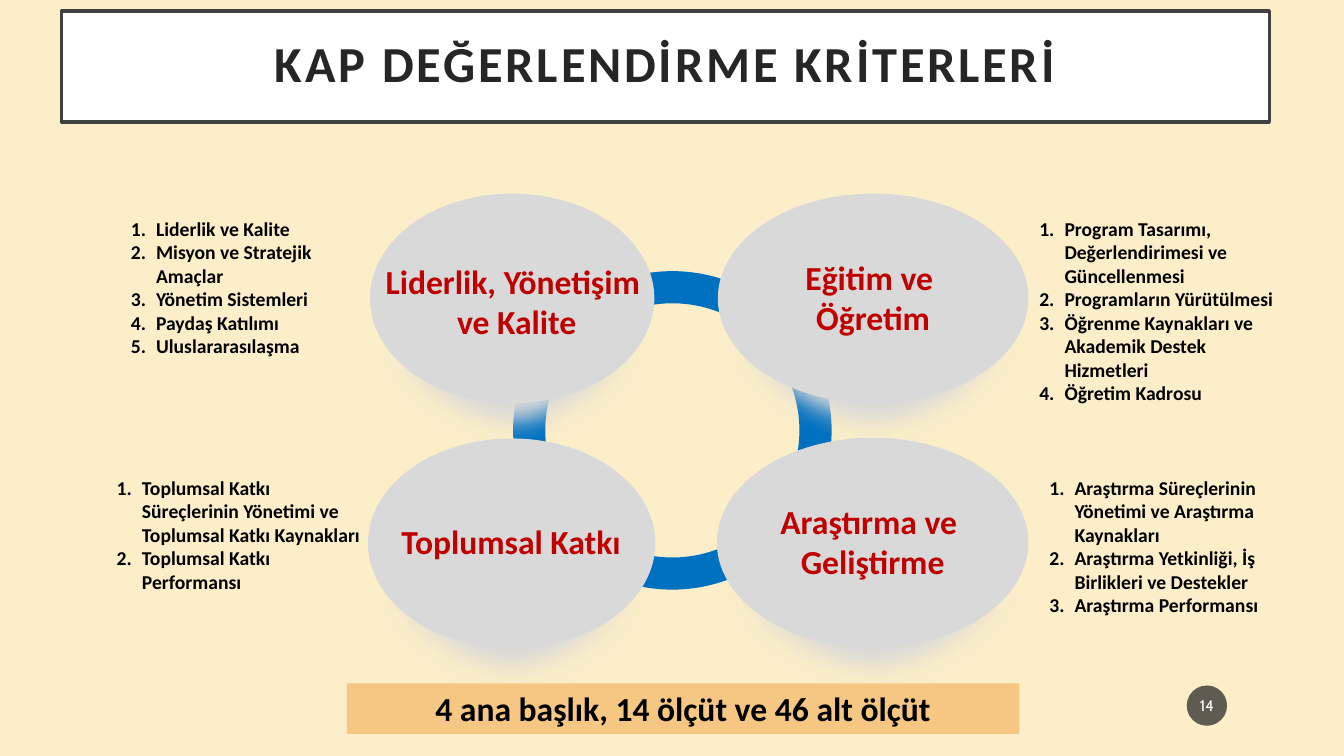
"""Build the slide of the four KAP evaluation criteria."""
from lxml.etree import SubElement
from pptx import Presentation
from pptx.dml.color import RGBColor
from pptx.enum.shapes import MSO_SHAPE
from pptx.enum.text import MSO_ANCHOR, MSO_AUTO_SIZE, PP_ALIGN
from pptx.oxml.ns import qn
from pptx.util import Inches, Pt

prs = Presentation()
prs.slide_width, prs.slide_height = Inches(13.33), Inches(7.5)
COL, ROW = prs.slide_width / 100, prs.slide_height / 100
slide = prs.slides.add_slide(prs.slide_layouts[6])
rgb = RGBColor.from_string
slide.background.fill.solid()
slide.background.fill.fore_color.rgb = rgb("FBEEC9")


def add(kind, box, fill=None):
    """Add a filled shape, or a text box when kind is None, at slide percentages."""
    x, y, w, h = box
    at = [int(v) for v in (x * COL, y * ROW, w * COL, h * ROW)]
    if kind is None:
        return slide.shapes.add_textbox(*at)
    s = slide.shapes.add_shape(kind, *at)
    s.shadow.inherit = False
    s.fill.solid()
    s.fill.fore_color.rgb = rgb(fill)
    s.line.fill.background()
    return s


def write(s, lines, size, color, align=PP_ALIGN.CENTER, frame=None, font="Calibri", bold=True):
    """Write one paragraph per line and return the text frame."""
    tf = s.text_frame
    settings = {"word_wrap": True, "auto_size": MSO_AUTO_SIZE.SHAPE_TO_FIT_TEXT}
    for name, value in {**settings, **(frame or {})}.items():
        setattr(tf, name, value)
    for i, line in enumerate(lines):
        p = tf.paragraphs[0] if i == 0 else tf.add_paragraph()
        p.alignment = align
        r = p.add_run()
        r.text = line
        for name, value in {"name": font, "size": Pt(size), "bold": bold}.items():
            setattr(r.font, name, value)
        r.font.color.rgb = rgb(color)
    return tf


ring = add(MSO_SHAPE.DONUT, (38.18, 35.87, 23.7, 42.13), "0070C0")
ring.adjustments[0] = 0.101

criteria = [
    ((27.53, 25.6, 21.16), (27.83, 33.73, 21.23, 12.13),
     ["Liderlik, Yönetişim ", "ve Kalite"]),
    ((53.41, 25.6, 23.11), (59.11, 33.2, 11.7, 12.13),
     ["Eğitim ve ", "Öğretim"]),
    ((27.38, 58, 21.38), (29.03, 68.27, 18, 6.67),
     ["Toplumsal Katkı"]),
    ((53.34, 57.9, 23.18), (57.24, 65.47, 15.38, 12.13),
     ["Araştırma ve ", "Geliştirme"]),
]
for (x, y, w), label_box, label in criteria:
    inset = 0.046 * w
    layers = [
        ((x, y + 6.4, w, 27.73), 0.3),
        ((x + inset, y + 2.93, w - 2 * inset, 29.07), 0.25),
        ((x, y, w, 27.73), 0),
    ]
    for box, blur in layers:
        oval = add(MSO_SHAPE.OVAL, box, "D9D9D9")
        if blur:
            effects = oval._element.spPr.find(qn("a:effectLst"))
            SubElement(effects, qn("a:softEdge"), rad=str(Inches(blur)))
    write(add(None, label_box), label, 24, "C00000",
          frame={"word_wrap": False, "vertical_anchor": MSO_ANCHOR.MIDDLE})

measures = [
    ((7.95, 62.27, 19.73, 23.33), [
        "Toplumsal Katkı Süreçlerinin Yönetimi ve Toplumsal Katkı Kaynakları",
        "Toplumsal Katkı Performansı"]),
    ((77.34, 62.27, 21.91, 23.33), [
        "Araştırma Süreçlerinin Yönetimi ve Araştırma Kaynakları",
        "Araştırma Yetkinliği, İş Birlikleri ve Destekler",
        "Araştırma Performansı"]),
    ((9, 28, 18.53, 23.33), [
        "Liderlik ve Kalite",
        "Misyon ve Stratejik Amaçlar",
        "Yönetim Sistemleri",
        "Paydaş Katılımı",
        "Uluslararasılaşma"]),
    ((76.59, 28, 18.9, 29.6), [
        "Program Tasarımı, Değerlendirimesi ve Güncellenmesi",
        "Programların Yürütülmesi",
        "Öğrenme Kaynakları ve Akademik Destek Hizmetleri",
        "Öğretim Kadrosu"]),
]
for box, items in measures:
    tf = write(add(None, box), items, 14, "000000", PP_ALIGN.LEFT)
    for p in tf.paragraphs:
        pPr = p._p.get_or_add_pPr()
        pPr.set("marL", str(Inches(0.25)))
        pPr.set("indent", str(-Inches(0.25)))
        SubElement(pPr, qn("a:buFont"), typeface="+mj-lt")
        SubElement(pPr, qn("a:buAutoNum"), type="arabicPeriod")

summary = add(MSO_SHAPE.RECTANGLE, (25.81, 90.4, 50.04, 6.67), "F6C782")
write(summary, ["4 ana başlık, 14 ölçüt ve 46 alt ölçüt"], 24, "000000",
      frame={"vertical_anchor": MSO_ANCHOR.TOP})

badge = add(MSO_SHAPE.OVAL, (88.3, 90.67, 3, 5.33), "1D1D1D")
badge_color = badge._element.spPr.find(qn("a:solidFill"))[0]
SubElement(badge_color, qn("a:alpha"), val="70000")
write(badge, ["14"], 11, "FFFFFF", font="Cabin", bold=False, frame={
    "auto_size": MSO_AUTO_SIZE.NONE, "vertical_anchor": MSO_ANCHOR.MIDDLE,
    "margin_left": Inches(0.02), "margin_right": Inches(0.02)})

title = add(MSO_SHAPE.RECTANGLE, (4.58, 1.47, 89.87, 14.67), "FFFFFF")
title.line.color.rgb = rgb("404040")
title.line.width = Pt(2.5)
margins = {f"margin_{side}": Inches(0.2) for side in ("left", "top", "right", "bottom")}
tf = write(title, ["KAP DEĞERLENDİRME KRİTERLERİ"], 36, "262626", frame={
    "auto_size": MSO_AUTO_SIZE.NONE, "vertical_anchor": MSO_ANCHOR.MIDDLE, **margins})
p = tf.paragraphs[0]
p.line_spacing = 0.9
p.runs[0]._r.get_or_add_rPr().set("spc", "200")

prs.save("out.pptx")
